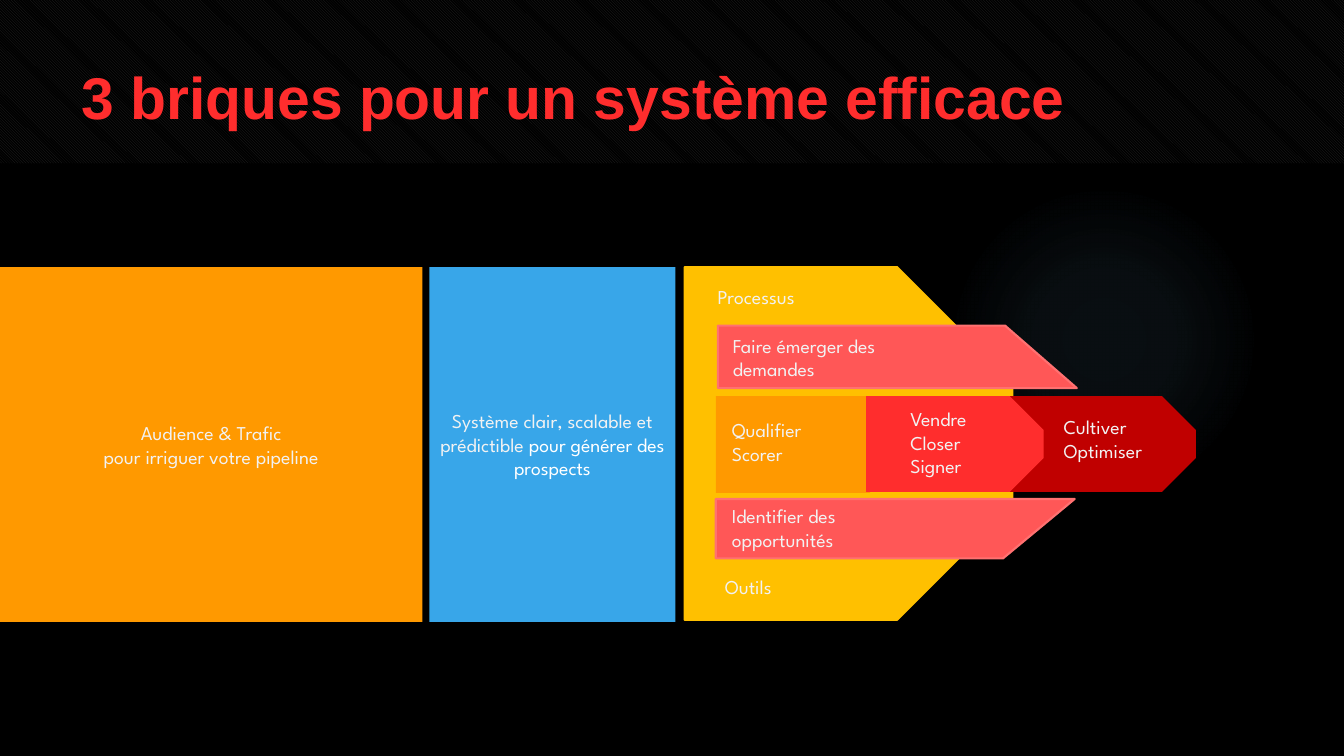
from dataclasses import dataclass

import lxml.etree
import pptx
import pptx.dml.color
import pptx.enum.dml
import pptx.enum.shapes
import pptx.enum.text
import pptx.oxml
import pptx.oxml.ns
import pptx.util

Inches = pptx.util.Inches
Preset = pptx.enum.shapes.MSO_SHAPE
Align = pptx.enum.text.PP_ALIGN
Anchor = pptx.enum.text.MSO_ANCHOR


@dataclass(frozen=True)
class Theme:
    background: str = "000000"
    stripe: str = "262626"
    glow: str = "7AC4F0"
    red: str = "FF2D2D"
    dark_red: str = "C00000"
    coral: str = "FF5757"
    coral_edge: str = "FF7171"
    orange: str = "FF9900"
    yellow: str = "FFC000"
    blue: str = "38A6E9"
    text: str = "F2F2F2"
    white: str = "FFFFFF"
    title_font: str = "Arial"
    body_font: str = "League Spartan"
    title_size: int = 42
    body_size: int = 14
    edge_width: float = 1.5


THEME = Theme()


@dataclass(frozen=True)
class Block:
    left: float
    top: float
    width: float
    height: float
    fill: str
    preset: Preset = Preset.RECTANGLE
    snip: float | None = None
    mirrored: bool = False
    edge: str | None = None
    text: str = ""
    white_text: str = ""


@dataclass(frozen=True)
class Label:
    left: float
    top: float
    width: float
    height: float
    text: str


SNIP = Preset.SNIP_2_SAME_RECTANGLE
SLANT = Preset.FLOWCHART_MANUAL_INPUT

BLOCKS = (
    Block(6.79, 2.65, 3.25, 3.5, THEME.yellow, SNIP, 0.352, edge=THEME.yellow),
    Block(9.99, 3.93, 1.87, 0.95, THEME.dark_red, SNIP, 0.352),
    Block(4.26, 2.65, 2.44, 3.52, THEME.blue,
          text="Système clair, scalable et prédictible ",
          white_text="pour générer des prospects"),
    Block(7.1, 4.95, 3.56, 0.59, THEME.coral, SLANT, mirrored=True, edge=THEME.coral_edge),
    Block(7.12, 3.23, 3.56, 0.62, THEME.coral, SLANT, edge=THEME.coral_edge),
    Block(7.1, 3.93, 1.87, 0.96, THEME.orange, SNIP, 0.361),
    Block(0, 2.65, 4.19, 3.52, THEME.orange,
          text="Audience & Trafic\npour irriguer votre pipeline"),
    Block(8.59, 3.93, 1.76, 0.95, THEME.red, SNIP, 0.352),
)

LABELS = (
    Label(7.02, 2.78, 2.15, 0.34, "Processus"),
    Label(7.17, 3.26, 1.71, 0.57, "Faire émerger des demandes"),
    Label(7.16, 4.1, 2.28, 0.57, "Qualifier\nScorer"),
    Label(8.93, 3.99, 1.2, 0.81, "Vendre\vCloser\vSigner"),
    Label(10.45, 4.07, 1.2, 0.57, "Cultiver\vOptimiser"),
    Label(7.16, 4.95, 2.09, 0.57, "Identifier des opportunités"),
    Label(7.09, 5.65, 1.61, 0.34, "Outils"),
)

BODY_FORMAT = {"name": THEME.body_font, "size": pptx.util.Pt(THEME.body_size), "bold": False}
TITLE_FORMAT = {"name": THEME.title_font, "size": pptx.util.Pt(THEME.title_size), "bold": True}


def rgb(color: str) -> pptx.dml.color.RGBColor:
    return pptx.dml.color.RGBColor.from_string(color)


def format_run(run, values: dict, color: str) -> None:
    for name, value in values.items():
        setattr(run.font, name, value)
    run.font.color.rgb = rgb(color)


def write_text(frame, text: str, values: dict, color: str, alignment: Align) -> None:
    frame.word_wrap = True
    frame.text = text
    for paragraph in frame.paragraphs:
        paragraph.alignment = alignment
        for run in paragraph.runs:
            format_run(run, values, color)


def add_plain_shape(slide, preset: Preset, left: float, top: float, width: float, height: float):
    shape = slide.shapes.add_shape(
        preset, Inches(left), Inches(top), Inches(width), Inches(height))
    shape.shadow.inherit = False
    shape.line.fill.background()
    return shape


def add_glow(slide) -> None:
    shape = add_plain_shape(slide, Preset.OVAL, 9.41, 1.83, 3.08, 3.08)
    shape.fill.background()
    stops = "".join(
        f'<a:gs pos="{position * 1000}"><a:srgbClr val="{THEME.glow}">'
        f'<a:alpha val="{opacity * 1000}"/></a:srgbClr></a:gs>'
        for position, opacity in ((0, 7), (36, 6), (69, 0)))
    gradient = pptx.oxml.parse_xml(
        f'<a:gradFill {pptx.oxml.ns.nsdecls("a")}><a:gsLst>{stops}</a:gsLst>'
        '<a:path path="circle"><a:fillToRect l="50000" t="50000" r="50000" b="50000"/>'
        '</a:path></a:gradFill>')
    properties = shape.element.spPr
    properties.replace(properties.find(pptx.oxml.ns.qn("a:noFill")), gradient)


def add_header(slide) -> None:
    band = add_plain_shape(slide, Preset.RECTANGLE, 0, 0, 13.33, 1.62)
    band.fill.patterned()
    band.fill.pattern = pptx.enum.dml.MSO_PATTERN.DARK_DOWNWARD_DIAGONAL
    band.fill.fore_color.rgb = rgb(THEME.stripe)
    band.fill.back_color.rgb = rgb(THEME.background)
    title = slide.shapes.add_textbox(Inches(0.71), Inches(0.5), Inches(11.91), Inches(1.53))
    title.text_frame.margin_top = Inches(0.1)
    write_text(title.text_frame, "3 briques pour un système efficace",
               TITLE_FORMAT, THEME.red, Align.LEFT)


def add_block(slide, block: Block) -> None:
    left, top, width, height = block.left, block.top, block.width, block.height
    turned = block.preset != Preset.RECTANGLE
    if turned:
        left, top = left + (width - height) / 2, top + (height - width) / 2
        width, height = height, width
    shape = add_plain_shape(slide, block.preset, left, top, width, height)
    shape.rotation = 90 if turned else 0
    shape.fill.solid()
    shape.fill.fore_color.rgb = rgb(block.fill)
    if block.snip is not None:
        shape.adjustments[0] = block.snip
        shape.adjustments[1] = 0
    if block.mirrored:
        shape.element.spPr.xfrm.set("flipH", "1")
    if block.edge:
        shape.line.color.rgb = rgb(block.edge)
        shape.line.width = pptx.util.Pt(THEME.edge_width)
    if block.text:
        frame = shape.text_frame
        frame.vertical_anchor = Anchor.MIDDLE
        write_text(frame, block.text, BODY_FORMAT, THEME.text, Align.CENTER)
        if block.white_text:
            run = frame.paragraphs[-1].add_run()
            run.text = block.white_text
            format_run(run, BODY_FORMAT, THEME.white)


def add_label(slide, label: Label) -> None:
    box = slide.shapes.add_textbox(
        Inches(label.left), Inches(label.top), Inches(label.width), Inches(label.height))
    write_text(box.text_frame, label.text, BODY_FORMAT, THEME.text, Align.LEFT)
    box.text_frame.auto_size = pptx.enum.text.MSO_AUTO_SIZE.SHAPE_TO_FIT_TEXT


def main() -> None:
    presentation = pptx.Presentation()
    presentation.slide_width = Inches(13.33)
    presentation.slide_height = Inches(7.5)
    slide = presentation.slides.add_slide(presentation.slide_layouts[6])
    slide.background.fill.solid()
    slide.background.fill.fore_color.rgb = rgb(THEME.background)
    add_glow(slide)
    add_header(slide)
    for block in BLOCKS:
        add_block(slide, block)
    for label in LABELS:
        add_label(slide, label)
    presentation.save("out.pptx")


if __name__ == "__main__":
    main()
